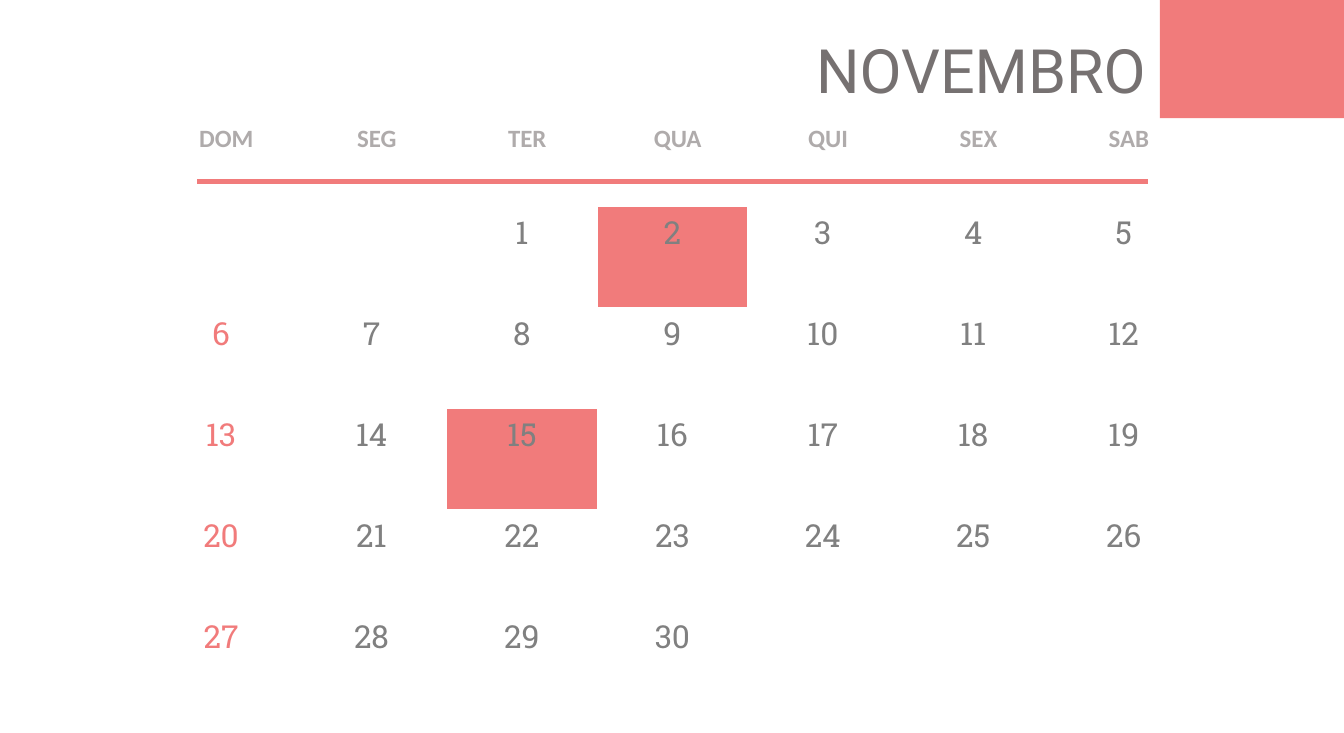
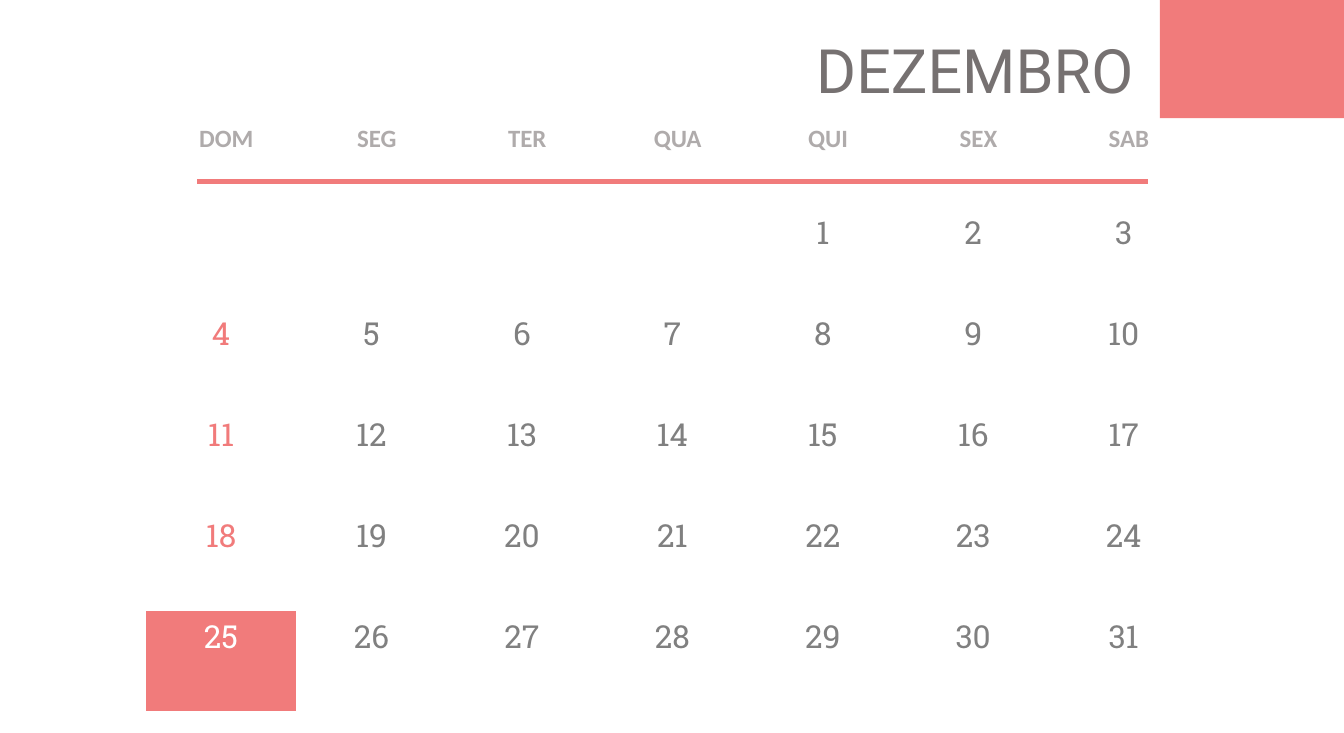
from lxml import etree
from pptx import Presentation
from pptx.dml.color import RGBColor
from pptx.enum import shapes, text
from pptx.oxml import ns
from pptx.util import Inches, Pt

COLORS = {
    "accent": "F17B7B",
    "title": "767171",
    "weekday": "AFABAB",
    "day": "808080",
    "white": "FFFFFF",
}
WEEKDAYS = ["DOM", "SEG", "TER", "QUA", "QUI", "SEX", "SAB"]
WEEKS = 5
COLUMN_WIDTH = 12.93 / len(WEEKDAYS)
HEADER_HEIGHT, WEEK_HEIGHT = 1.09, 1.24

TITLE_FONT = {"name": "Roboto", "size": Pt(54), "bold": False}
WEEKDAY_FONT = {"name": "Calibri", "size": Pt(22), "bold": True}
DAY_FONT = {"name": "Roboto Slab", "size": Pt(28), "bold": False}
# Cell margins: left, top, right, bottom
WEEKDAY_MARGINS = (0.13, 0.07, 0, 0.07)
DAY_MARGINS = (0.14, 0.06, 0.14, 0.06)

# first_column counts from Sunday = 0
MONTHS = [
    {"name": "NOVEMBRO", "first_column": 2, "days": 30, "holidays": {2, 15},
     "title_width": 4.32},
    {"name": "DEZEMBRO", "first_column": 4, "days": 31, "holidays": {25},
     "title_width": 4.14},
]


def rgb(key):
    return RGBColor.from_string(COLORS[key])


def set_all(obj, values):
    for name, value in values.items():
        setattr(obj, name, value)


def write(p, content, font, color, align):
    p.alignment = align
    r = p.add_run()
    r.text = content
    set_all(r.font, font)
    r.font.color.rgb = rgb(color)


def add_cell_borders(cell):
    tc_pr = cell._tc.get_or_add_tcPr()
    for side in ("lnL", "lnR", "lnT", "lnB"):
        ln = etree.SubElement(tc_pr, ns.qn(f"a:{side}"), w=str(Pt(1)))
        fill = etree.SubElement(ln, ns.qn("a:solidFill"))
        etree.SubElement(fill, ns.qn("a:srgbClr"), val=COLORS["white"])


def write_cell(cell, content, font, color, margins):
    sides = ("margin_left", "margin_top", "margin_right", "margin_bottom")
    set_all(cell, dict(zip(sides, map(Inches, margins))))
    write(cell.text_frame.paragraphs[0], content, font, color,
          text.PP_ALIGN.CENTER)


def add_title(slide, month):
    sp = slide.shapes.title
    set_all(sp, {"left": Inches(9.92), "top": Inches(0.35),
                 "width": Inches(month["title_width"]),
                 "height": Inches(1.01)})
    tf = sp.text_frame
    set_all(tf, {"word_wrap": False,
                 "auto_size": text.MSO_AUTO_SIZE.SHAPE_TO_FIT_TEXT,
                 "vertical_anchor": text.MSO_ANCHOR.TOP})
    write(tf.paragraphs[0], month["name"], TITLE_FONT, "title",
          text.PP_ALIGN.LEFT)


def add_calendar(slide, month):
    table = slide.shapes.add_table(
        WEEKS + 1, len(WEEKDAYS), Inches(1.79), Inches(1.45),
        Inches(COLUMN_WIDTH * len(WEEKDAYS)),
        Inches(HEADER_HEIGHT + WEEKS * WEEK_HEIGHT)).table
    table.horz_banding = False
    for row in table.rows:
        row.height = Inches(WEEK_HEIGHT)
    table.rows[0].height = Inches(HEADER_HEIGHT)
    for cell in table.iter_cells():
        add_cell_borders(cell)
        cell.fill.background()

    for column, weekday in enumerate(WEEKDAYS):
        write_cell(table.cell(0, column), weekday, WEEKDAY_FONT, "weekday",
                   WEEKDAY_MARGINS)
    for day in range(1, month["days"] + 1):
        week, column = divmod(month["first_column"] + day - 1, len(WEEKDAYS))
        cell = table.cell(week + 1, column)
        holiday = day in month["holidays"]
        color = "day"
        if column == 0:
            color = "white" if holiday else "accent"
        write_cell(cell, str(day), DAY_FONT, color, DAY_MARGINS)
        if holiday:
            cell.fill.solid()
            cell.fill.fore_color.rgb = rgb("accent")


def add_header_rule(slide):
    line = slide.shapes.add_connector(
        shapes.MSO_CONNECTOR.STRAIGHT,
        Inches(2.42), Inches(2.23), Inches(14.09), Inches(2.23))
    line.line.width = Pt(4.5)
    line.line.color.rgb = rgb("accent")
    etree.SubElement(line._element.spPr, ns.qn("a:effectLst"))


def add_corner_block(slide):
    sp = slide.shapes.add_shape(
        shapes.MSO_SHAPE.RECTANGLE,
        Inches(14.24), 0, Inches(2.26), Inches(1.45))
    sp.shadow.inherit = False
    sp.fill.solid()
    sp.fill.fore_color.rgb = rgb("accent")
    sp.line.fill.background()


def main():
    prs = Presentation()
    prs.slide_width, prs.slide_height = Inches(16.5), Inches(9)
    title_only = prs.slide_layouts[5]
    for month in MONTHS:
        slide = prs.slides.add_slide(title_only)
        add_calendar(slide, month)
        add_title(slide, month)
        add_header_rule(slide)
        add_corner_block(slide)
    prs.save("out.pptx")


if __name__ == "__main__":
    main()
